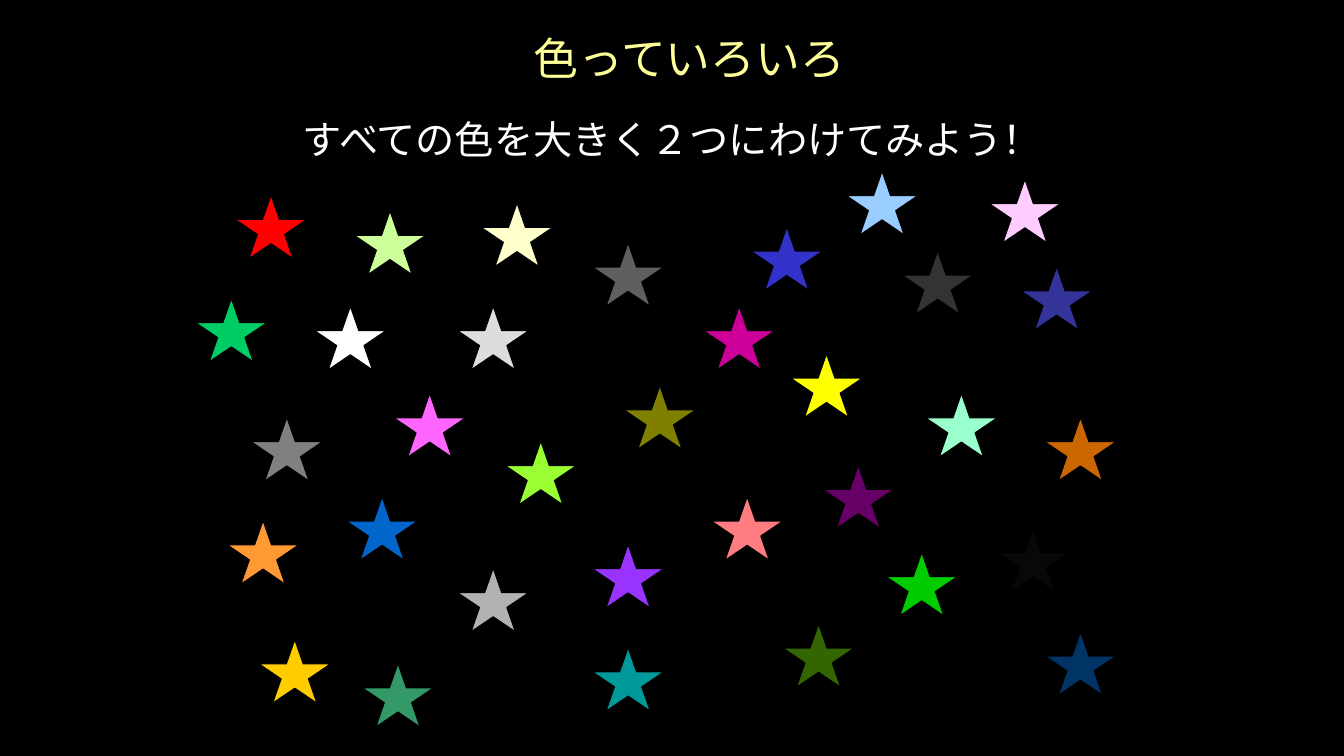
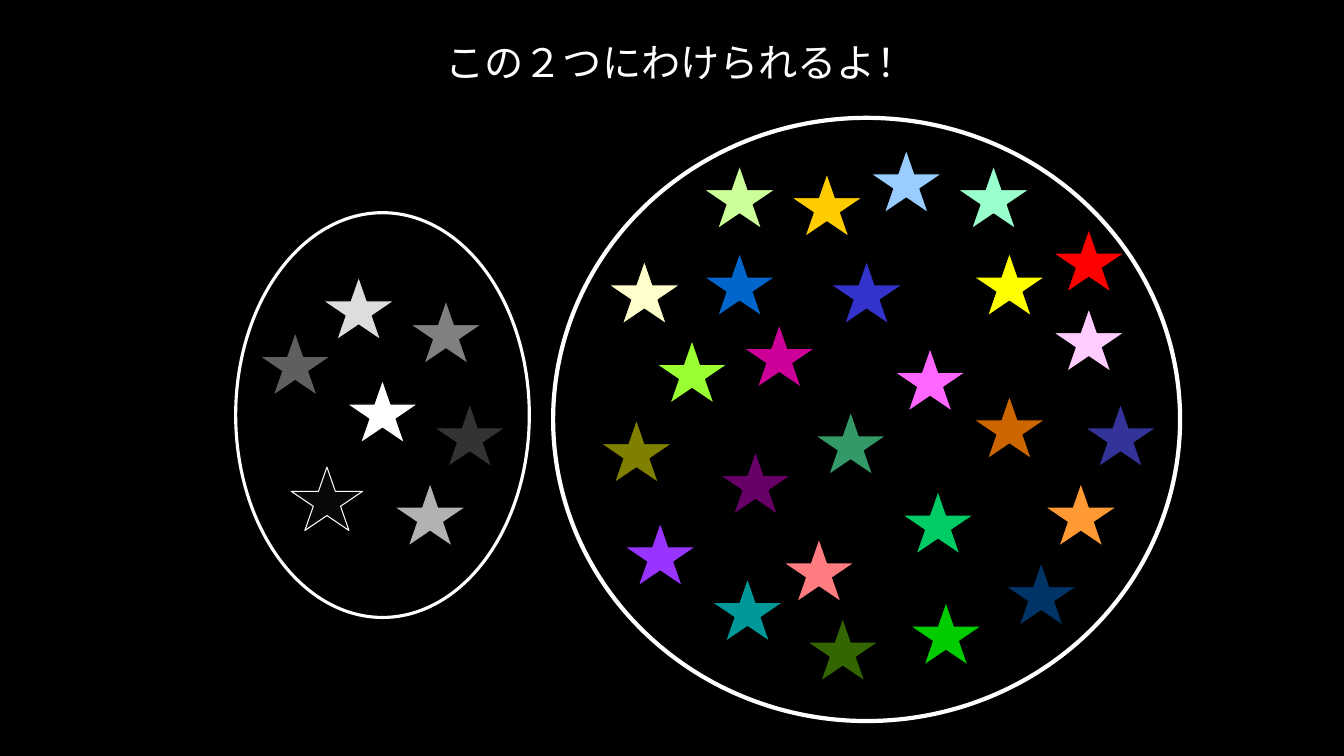
"""Build two slides that sort coloured stars into greys and colours."""
from pptx import Presentation
from pptx.dml.color import RGBColor
from pptx.enum.shapes import MSO_SHAPE as Shape
from pptx.enum.text import MSO_AUTO_SIZE as AutoSize, PP_ALIGN as Align
from pptx.oxml.ns import qn
from pptx.util import Cm, Pt

FONT_NAME = "Noto Sans CJK JP"
STAR_SIZE = (1.8, 1.6)
COLORS = {
    "background": "000000", "text": "FFFFFF", "title": "FFFF99",
    "red": "FF0000", "orange": "FF9933", "gold": "FFCC00",
    "yellow": "FFFF00", "lime": "99FF33", "green": "00CC00",
    "emerald": "00CC66", "teal": "009999", "blue": "0066CC",
    "indigo": "3333CC", "violet": "9933FF", "magenta": "CC0099",
    "pink": "FF66FF", "salmon": "FF7C80", "brown": "CC6600",
    "olive": "808000", "moss": "336600", "sea": "339966",
    "navy": "003366", "dusk": "333399", "plum": "660066",
    "pale lime": "CCFF99", "mint": "99FFCC", "sky": "99CCFF",
    "pale pink": "FFCCFF", "cream": "FFFFCC", "pale grey": "DDDDDD",
    "light grey": "B2B2B2", "grey": "808080", "dim grey": "5F5F5F",
    "dark grey": "333333", "black": "080808", "white": "FFFFFF",
}
MIXED_STARS = {
    "red": (5.93, 4.92), "orange": (5.73, 13.12), "gold": (6.53, 16.12),
    "yellow": (19.93, 8.92), "lime": (12.73, 11.12), "green": (22.33, 13.92),
    "emerald": (4.93, 7.52), "teal": (14.93, 16.32), "blue": (8.73, 12.52),
    "indigo": (18.93, 5.72), "violet": (14.93, 13.72),
    "magenta": (17.73, 7.72), "pink": (9.93, 9.92), "salmon": (17.93, 12.52),
    "brown": (26.33, 10.52), "olive": (15.73, 9.72), "moss": (19.73, 15.72),
    "sea": (9.13, 16.72), "navy": (26.33, 15.92), "dusk": (25.73, 6.72),
    "plum": (20.73, 11.72), "pale lime": (8.93, 5.32), "mint": (23.33, 9.92),
    "sky": (21.33, 4.32), "pale pink": (24.93, 4.52), "cream": (12.13, 5.12),
    "pale grey": (11.53, 7.72), "light grey": (11.53, 14.32),
    "grey": (6.33, 10.52), "dim grey": (14.93, 6.12),
    "dark grey": (22.73, 6.32), "black": (25.13, 13.32),
    "white": (7.93, 7.72),
}
SORTED_STARS = {
    "red": (26.54, 5.77), "orange": (26.34, 12.17), "gold": (19.94, 4.37),
    "yellow": (24.54, 6.37), "lime": (16.54, 8.57), "green": (22.94, 15.17),
    "emerald": (22.74, 12.37), "teal": (17.94, 14.57), "blue": (17.74, 6.37),
    "indigo": (20.94, 6.57), "violet": (15.74, 13.17),
    "magenta": (18.74, 8.17), "pink": (22.54, 8.77), "salmon": (19.74, 13.57),
    "brown": (24.54, 9.97), "olive": (15.14, 10.57), "moss": (20.34, 15.57),
    "sea": (20.54, 10.37), "navy": (25.34, 14.17), "dusk": (27.34, 10.17),
    "plum": (18.14, 11.37), "pale lime": (17.74, 4.17), "mint": (24.14, 4.17),
    "sky": (21.94, 3.77), "pale pink": (26.54, 7.77), "cream": (15.34, 6.57),
    "pale grey": (8.14, 6.97), "light grey": (9.94, 12.17),
    "grey": (10.34, 7.57), "dim grey": (6.54, 8.37),
    "dark grey": (10.94, 10.17), "black": (7.34, 11.77),
    "white": (8.74, 9.57),
}


def color(name):
    return RGBColor.from_string(COLORS[name])


def apply_format(target, values):
    for name, value in values.items():
        setattr(target, name, value)


def add_outline(page, kind, position, size, line_color, weight):
    shape = page.shapes.add_shape(kind, *map(Cm, position + size))
    shape.shadow.inherit = False
    shape.fill.background()
    shape.line.color.rgb = color(line_color)
    shape.line.width = Pt(weight)
    return shape


def add_stars(page, stars, outlined=()):
    for name, position in stars.items():
        edge = "text" if name in outlined else "background"
        star = add_outline(page, Shape.STAR_5_POINT, position, STAR_SIZE, edge, 0.75)
        star.fill.solid()
        star.fill.fore_color.rgb = color(name)


def add_heading(page, text, position, size, points, color_name="text"):
    box = page.shapes.add_textbox(*map(Cm, position + size))
    apply_format(box.text_frame, {"word_wrap": True, "auto_size": AutoSize.SHAPE_TO_FIT_TEXT})
    para = box.text_frame.paragraphs[0]
    para.alignment = Align.CENTER
    span = para.add_run()
    span.text = text
    apply_format(span.font, {"name": FONT_NAME, "size": Pt(points)})
    span.font.color.rgb = color(color_name)
    east_asian = span.font._element.makeelement(qn("a:ea"), {"typeface": FONT_NAME})
    span.font._element.append(east_asian)


def add_page(deck):
    return deck.slides.add_slide(deck.slide_layouts[6])


def build_mixed_page(deck):
    page = add_page(deck)
    add_stars(page, MIXED_STARS)
    add_heading(page, "すべての色を大きく２つにわけてみよう！", (6.86, 2.79), (20.17, 1.44), 28)
    add_heading(page, "色っていろいろ", (8.18, 0.64), (18.4, 1.6), 32, "title")


def build_sorted_page(deck):
    page = add_page(deck)
    add_stars(page, SORTED_STARS, outlined=("black",))
    add_outline(page, Shape.OVAL, (5.94, 5.36), (7.4, 10.2), "text", 2.25)
    add_outline(page, Shape.OVAL, (13.94, 2.97), (15.8, 15.2), "text", 3)
    add_heading(page, "この２つにわけられるよ！", (7.06, 0.84), (20.17, 1.44), 28)


def main():
    deck = Presentation()
    apply_format(deck, {"slide_width": Cm(33.87), "slide_height": Cm(19.05)})
    background = deck.slide_master.background.fill
    background.solid()
    background.fore_color.rgb = color("background")
    build_mixed_page(deck)
    build_sorted_page(deck)
    deck.save("out.pptx")


if __name__ == "__main__":
    main()
